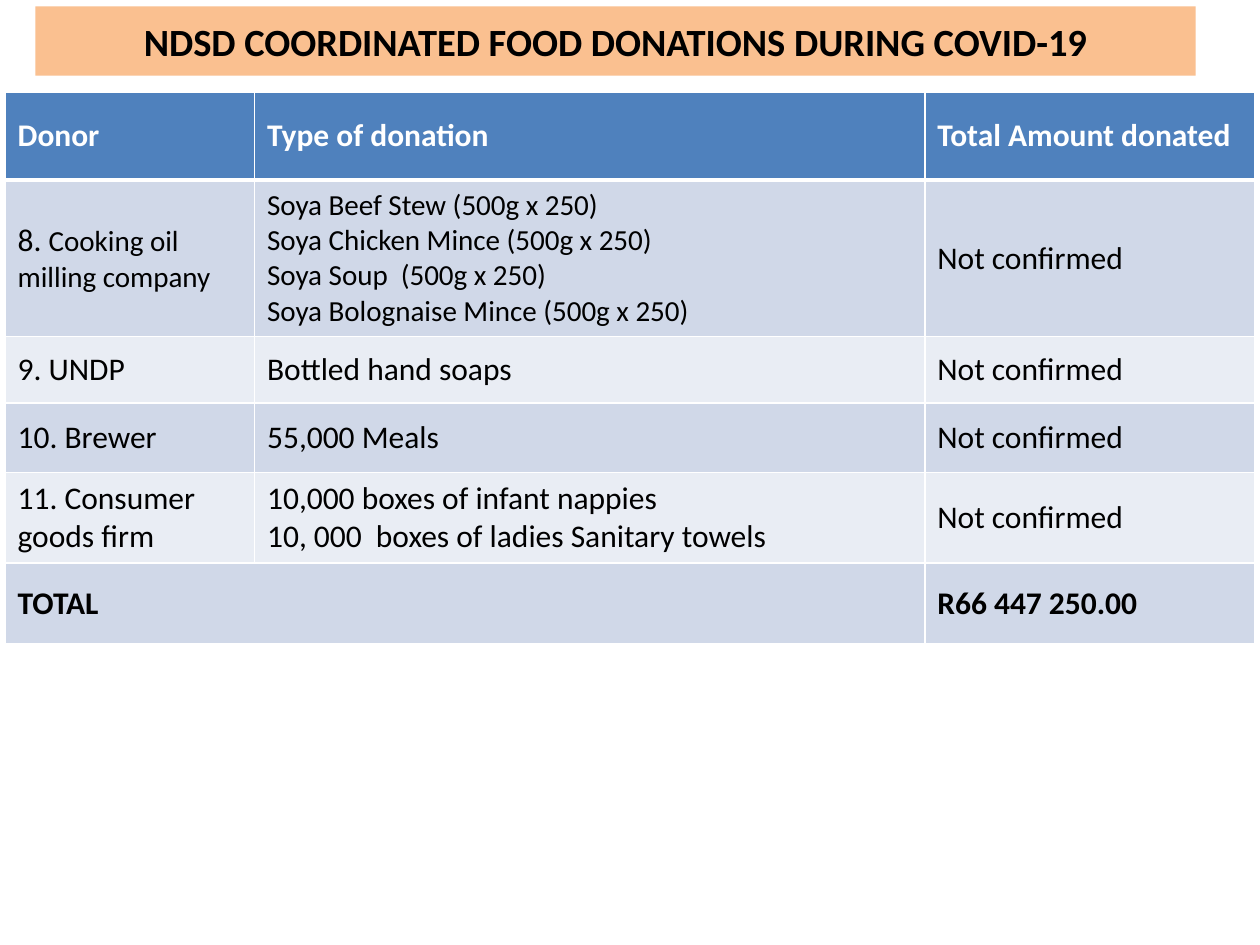
import pptx
import pptx.util
import pptx.dml.color
import pptx.enum.shapes
import pptx.enum.text
import pptx.oxml
import pptx.oxml.ns
from lxml import etree

Inches, Pt = pptx.util.Inches, pptx.util.Pt
MIDDLE = pptx.enum.text.MSO_ANCHOR.MIDDLE

COLORS = {"title": "FAC090", "header": "4F81BD", "odd": "D0D8E8",
          "even": "E9EDF4", "white": "FFFFFF", "black": "000000"}
FONT = "Calibri"
BODY_SIZE, SMALL_SIZE = 18, 16.6

TITLE = "NDSD COORDINATED FOOD DONATIONS DURING COVID-19"
COL_WIDTHS = [1.98, 5.32, 2.62]
ROW_HEIGHTS = [0.7, 1.24, 0.53, 0.55, 0.72, 0.64]

# Each cell is a list of paragraphs, each paragraph a list of (text, size) runs.
def lines(*texts, size=BODY_SIZE):
    return [[(text, size)] for text in texts]


UNCONFIRMED = lines("Not confirmed")
ROWS = [
    [lines("Donor"), lines("Type of donation"), lines("Total Amount donated")],
    [[[("8. ", BODY_SIZE), ("Cooking oil milling company", SMALL_SIZE)]],
     lines("Soya Beef Stew (500g x 250)", "Soya Chicken Mince (500g x 250)",
           "Soya Soup  (500g x 250)", "Soya Bolognaise Mince (500g x 250)",
           size=SMALL_SIZE),
     UNCONFIRMED],
    [lines("9. UNDP"), lines("Bottled hand soaps"), UNCONFIRMED],
    [lines("10. Brewer"), lines("55,000 Meals"), UNCONFIRMED],
    [lines("11. Consumer goods firm"),
     lines("10,000 boxes of infant nappies",
           "10, 000  boxes of ladies Sanitary towels"),
     UNCONFIRMED],
    [lines("TOTAL"), [], lines("R66 447 250.00")],
]


def rgb(name):
    return pptx.dml.color.RGBColor.from_string(COLORS[name])


def paint(fill, name):
    fill.solid()
    fill.fore_color.rgb = rgb(name)


def style(font, size, color, bold):
    font.name, font.size, font.bold = FONT, Pt(size), bold
    font.color.rgb = rgb(color)


def set_borders(cell, widths):
    """Draw white borders; widths maps a side (L, R, T, B) to points."""
    tc_pr = cell._tc.get_or_add_tcPr()
    for i, (side, width) in enumerate(widths.items()):
        ln = etree.Element(pptx.oxml.ns.qn(f"a:ln{side}"), w=str(Pt(width)))
        fill = etree.SubElement(ln, pptx.oxml.ns.qn("a:solidFill"))
        etree.SubElement(fill, pptx.oxml.ns.qn("a:srgbClr"), val=COLORS["white"])
        tc_pr.insert(i, ln)


def write_cell(cell, paragraphs, color, bold):
    tf = cell.text_frame
    for i, runs in enumerate(paragraphs):
        p = tf.paragraphs[0] if i == 0 else tf.add_paragraph()
        style(p.font, runs[0][1], color, bold)
        for text, size in runs:
            r = p.add_run()
            r.text = text
            if size != runs[0][1]:
                r.font.size = Pt(size)


def add_title(slide):
    s = slide.shapes.add_shape(pptx.enum.shapes.MSO_SHAPE.RECTANGLE,
                               Inches(0.28), Inches(0.05), Inches(9.21), Inches(0.55))
    s.shadow.inherit = False
    paint(s.fill, "title")
    s.line.fill.background()
    tf = s.text_frame
    tf.word_wrap = True
    tf.vertical_anchor = MIDDLE
    p = tf.paragraphs[0]
    p.text = TITLE
    p.alignment = pptx.enum.text.PP_ALIGN.CENTER
    style(p.font, 22, "black", True)


def add_donations(slide):
    table = slide.shapes.add_table(
        len(ROWS), len(COL_WIDTHS), Inches(0.04), Inches(0.73),
        Inches(sum(COL_WIDTHS)), Inches(sum(ROW_HEIGHTS))).table
    for column, width in zip(table.columns, COL_WIDTHS):
        column.width = Inches(width)
    last = len(ROWS) - 1
    for i, (row, height) in enumerate(zip(ROWS, ROW_HEIGHTS)):
        table.rows[i].height = Inches(height)
        header = i == 0
        fill = "header" if header else "odd" if i % 2 else "even"
        widths = {"L": 1, "R": 1, "T": 3 if i == 1 else 1, "B": 3 if header else 1}
        for j, paragraphs in enumerate(row):
            cell = table.cell(i, j)
            cell.vertical_anchor = MIDDLE
            paint(cell.fill, fill)
            set_borders(cell, widths)
            write_cell(cell, paragraphs, "white" if header else "black",
                       i in (0, last))
    table.cell(last, 0).merge(table.cell(last, 1))


def main():
    prs = pptx.Presentation()
    prs.slide_width, prs.slide_height = Inches(10), Inches(7.5)
    slide = prs.slides.add_slide(prs.slide_layouts[6])
    add_title(slide)
    add_donations(slide)
    prs.save("out.pptx")


if __name__ == "__main__":
    main()
